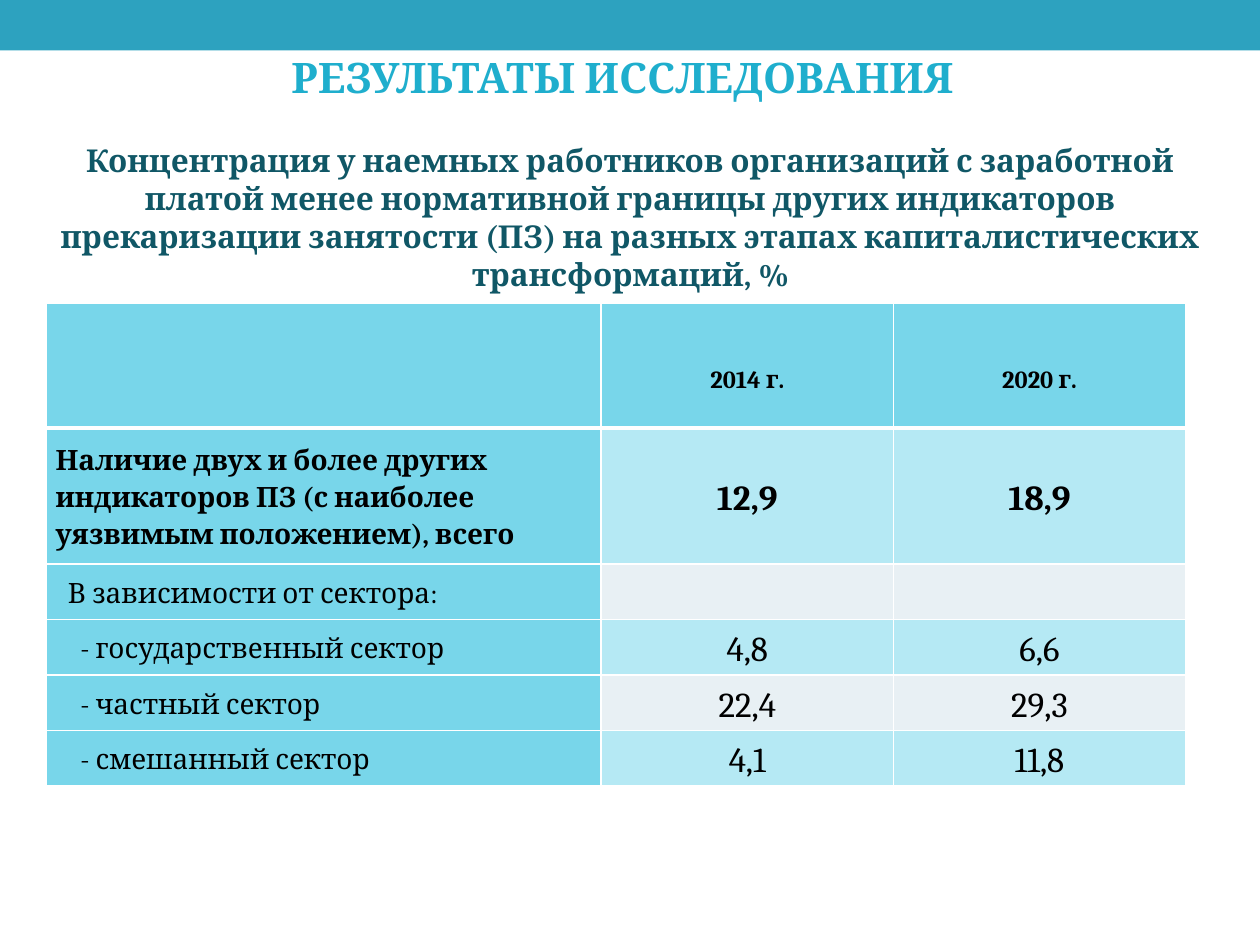
from lxml import etree
from pptx import Presentation
from pptx.dml.color import RGBColor
from pptx.enum.shapes import MSO_SHAPE
from pptx.enum.text import MSO_ANCHOR, MSO_AUTO_SIZE, PP_ALIGN
from pptx.oxml.ns import qn
from pptx.util import Cm, Pt

RECT = MSO_SHAPE.RECTANGLE
TOP, MIDDLE = MSO_ANCHOR.TOP, MSO_ANCHOR.MIDDLE
LEFT, CENTER = PP_ALIGN.LEFT, PP_ALIGN.CENTER
FIXED = MSO_AUTO_SIZE.NONE

FONT = "Cambria"
TEAL = RGBColor(0x2D, 0xA2, 0xBF)
CYAN = RGBColor(0x1F, 0xAE, 0xCD)
DEEP = RGBColor(0x10, 0x57, 0x66)
AQUA = RGBColor(0x78, 0xD6, 0xEA)
PALE = RGBColor(0xB5, 0xE9, 0xF4)
GREY = RGBColor(0xE8, 0xF0, 0xF4)
WHITE = RGBColor(0xFF, 0xFF, 0xFF)
BLACK = RGBColor(0, 0, 0)

TITLE = "РЕЗУЛЬТАТЫ ИССЛЕДОВАНИЯ"
CAPTION = (
    "Концентрация у наемных работников организаций с заработной платой "
    "менее нормативной границы других индикаторов прекаризации занятости "
    "(ПЗ) на разных этапах капиталистических трансформаций, %"
)
YEARS = ["", "2014 г.", "2020 г."]
ROWS = [
    ("Наличие двух и более других индикаторов ПЗ "
     "(с наиболее уязвимым положением), всего", "12,9", "18,9"),
    ("В зависимости от сектора:", "", ""),
    ("- государственный сектор", "4,8", "6,6"),
    ("- частный сектор", "22,4", "29,3"),
    ("- смешанный сектор", "4,1", "11,8"),
]
INDENTS = [0, 0.25, 0.5, 0.5, 0.5]
WIDTHS = [11.18, 5.89, 5.89]
HEIGHTS = [2.51, 2.74] + [1.12] * 4


def add_run(para, text, size, color, bold):
    """Add one formatted run to a paragraph."""
    run = para.add_run()
    run.text = text
    font = run.font
    font.name, font.size, font.bold = FONT, Pt(size), bold
    font.color.rgb = color


def fill_holder(holder, box, text, size, color, anchor):
    """Move a placeholder to its box and set its centred text."""
    holder.left, holder.top, holder.width, holder.height = map(Cm, box)
    frame = holder.text_frame
    frame.word_wrap = True
    frame.auto_size = FIXED
    frame.vertical_anchor = anchor
    para = frame.paragraphs[0]
    para.alignment = CENTER
    para.space_before = Pt(0)
    props = para._p.get_or_add_pPr()
    props.set("marL", "0")
    props.set("indent", "0")
    etree.SubElement(props, qn("a:buNone"))
    add_run(para, text, size, color, True)


def add_bar(slide, box):
    """Draw the plain band along the top."""
    bar = slide.shapes.add_shape(RECT, *map(Cm, box))
    bar.shadow.inherit = False
    bar.fill.solid()
    bar.fill.fore_color.rgb = TEAL
    bar.line.fill.background()


def set_edges(cell, widths):
    """Give a cell white borders of the given widths in points."""
    props = cell._tc.get_or_add_tcPr()
    for side, width in widths.items():
        line = etree.SubElement(props, qn("a:ln" + side), w=str(Pt(width)))
        solid = etree.SubElement(line, qn("a:solidFill"))
        etree.SubElement(solid, qn("a:srgbClr"), val=str(WHITE))


def style_cell(cell, color, widths):
    """Set the borders, fill, margins and anchor of a cell."""
    set_edges(cell, widths)
    cell.fill.solid()
    cell.fill.fore_color.rgb = color
    cell.margin_left = cell.margin_right = Cm(0.18)
    cell.margin_top = cell.margin_bottom = Cm(0)
    cell.vertical_anchor = MIDDLE


def write_cell(cell, text, size, bold, align, space=None):
    """Write one line of text in a cell."""
    para = cell.text_frame.paragraphs[0]
    para.alignment = align
    para.line_spacing = space
    if text:
        add_run(para, text, size, BLACK, bold)
    else:
        para.font.size = Pt(size)


def add_grid(slide, left, top):
    """Build the table of shares by sector and year."""
    size = Cm(sum(WIDTHS)), Cm(sum(HEIGHTS))
    frame = slide.shapes.add_table(
        len(HEIGHTS), len(WIDTHS), Cm(left), Cm(top), *size)
    table = frame.table
    for col, width in zip(table.columns, WIDTHS):
        col.width = Cm(width)
    for row, height in zip(table.rows, HEIGHTS):
        row.height = Cm(height)
    for col, year in enumerate(YEARS):
        cell = table.cell(0, col)
        style_cell(cell, AQUA, {"L": 1, "R": 1, "T": 1, "B": 3})
        cell.margin_top = Cm(0.58)
        write_cell(cell, year, 14, True, CENTER)
    for num, values in enumerate(ROWS):
        band = GREY if num % 2 else PALE
        above = 1 if num else 3
        for col, text in enumerate(values):
            cell = table.cell(num + 1, col)
            style_cell(cell, band if col else AQUA,
                       {"L": 1, "R": 1, "T": above, "B": 1})
            write_cell(cell, text, 20 if col else 16, num == 0,
                       CENTER if col else LEFT, 1.15)
        props = table.cell(num + 1, 0).text_frame.paragraphs[0]._p.get_or_add_pPr()
        props.set("marL", str(Cm(INDENTS[num])))


def main():
    """Build and save the slide."""
    deck = Presentation()
    deck.slide_width, deck.slide_height = Cm(25.4), Cm(19.05)
    slide = deck.slides.add_slide(deck.slide_layouts[1])
    title, body = slide.placeholders
    add_bar(slide, (0, 0, 25.4, 1.02))
    fill_holder(title, (0, 0.91, 25.1, 1.27), TITLE, 24, CYAN, MIDDLE)
    add_grid(slide, 0.94, 6.12)
    fill_holder(body, (0.71, 2.72, 24, 2.57), CAPTION, 18, DEEP, TOP)
    deck.save("out.pptx")


if __name__ == "__main__":
    main()
